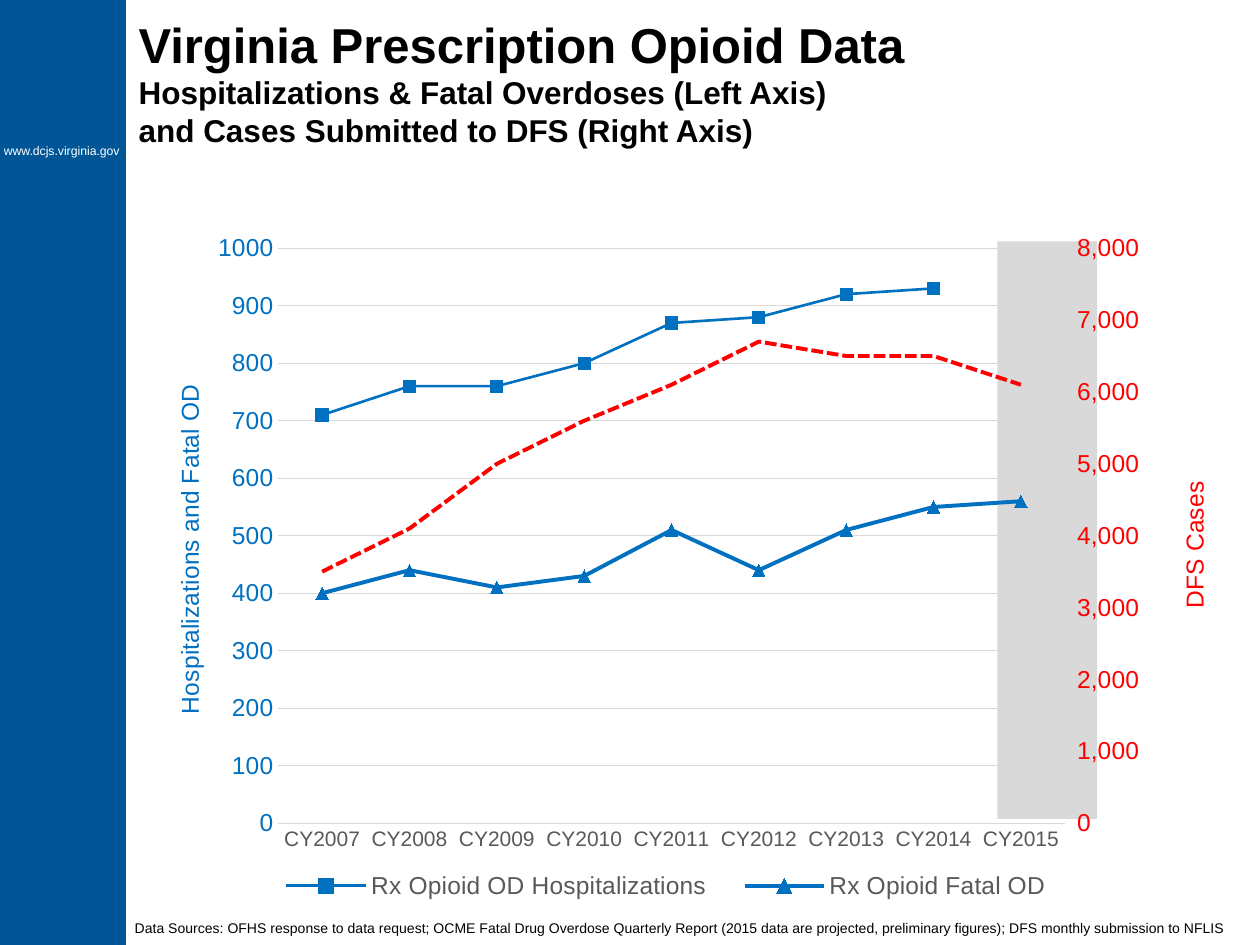
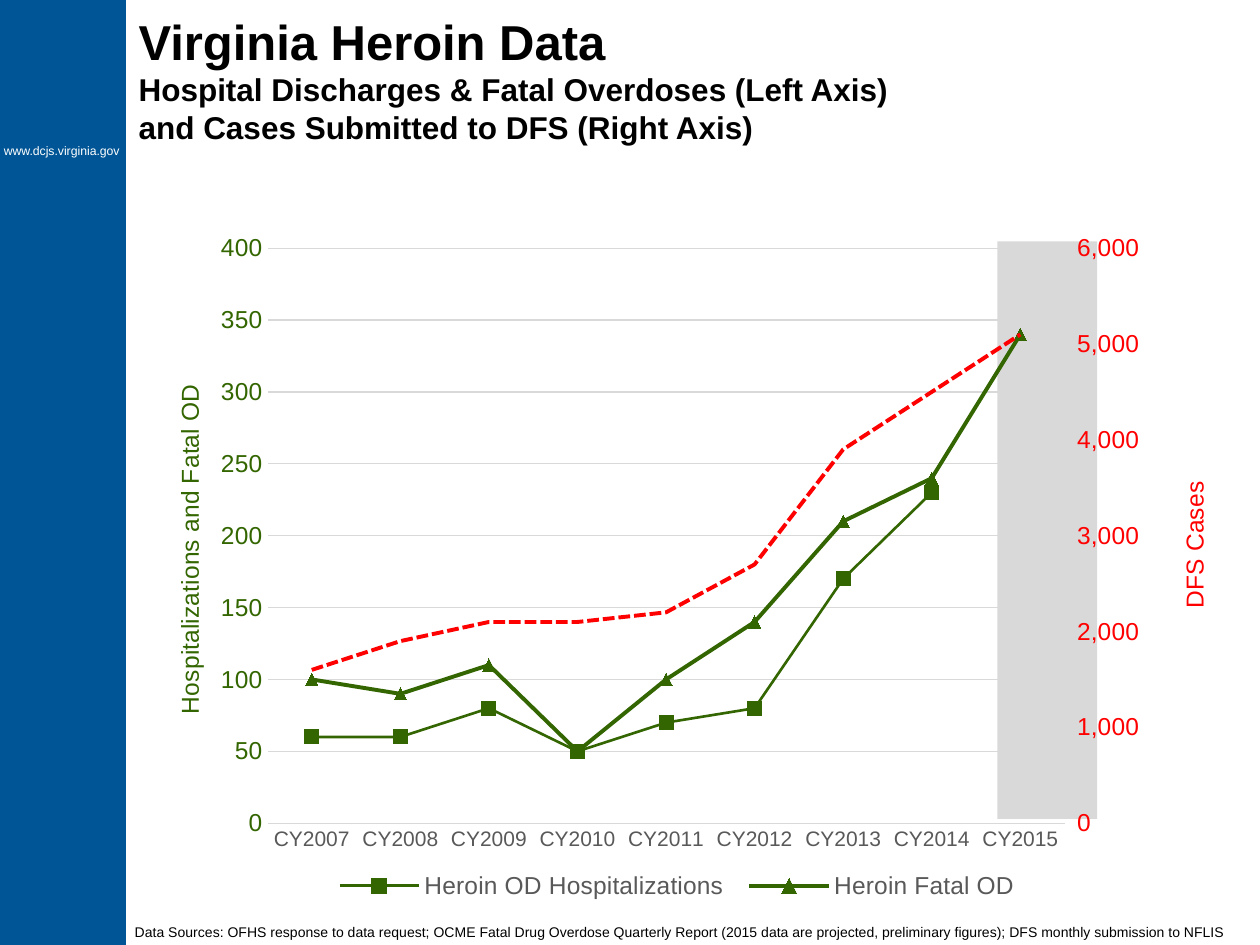
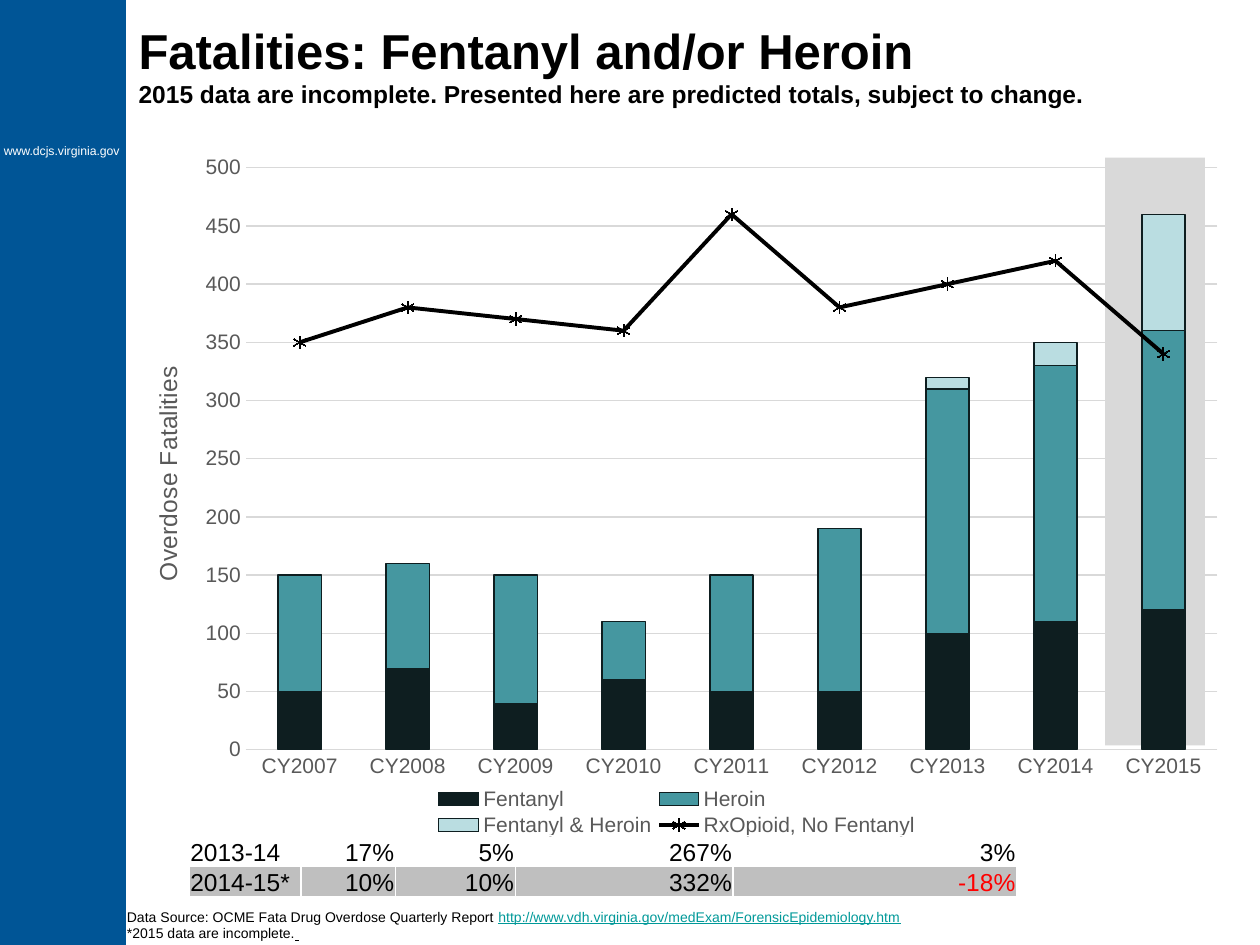
import copy
from dataclasses import dataclass

import pptx
import pptx.chart.axis
import pptx.chart.data
import pptx.dml.color
import pptx.enum.chart
import pptx.enum.dml
import pptx.enum.shapes
import pptx.enum.text
import pptx.oxml
import pptx.oxml.ns
import pptx.util

Pt = pptx.util.Pt
qn = pptx.oxml.ns.qn
ChartType = pptx.enum.chart.XL_CHART_TYPE
Marker = pptx.enum.chart.XL_MARKER_STYLE
Tick = pptx.enum.chart.XL_TICK_MARK


@dataclass(frozen=True)
class Theme:
    font: str = "Arial"
    black: str = "000000"
    white: str = "FFFFFF"
    band: str = "005596"
    gray: str = "D9D9D9"
    table_gray: str = "BFBFBF"
    axis_text: str = "595959"
    red: str = "FF0000"
    opioid: str = "0070C0"
    heroin: str = "336600"
    link: str = "009999"
    bar_line: str = "0E1E20"
    bars: tuple = ("0E1E20", "4597A0", "BADDE1")
    title: int = 28
    subtitle: int = 18
    large: int = 14
    label: int = 12
    small: int = 10
    source: int = 8
    web: int = 7


T = Theme()
YEARS = [f"CY{year}" for year in range(2007, 2016)]
SOURCES = ("Data Sources: OFHS response to data request; OCME Fatal Drug Overdose Quarterly Report "
           "(2015 data are projected, preliminary figures); DFS monthly submission to NFLIS")
AXIS_SUBTITLE = "and Cases Submitted to DFS (Right Axis)"
CHART_SIZE = (624, 396)


def rgb(color):
    return pptx.dml.color.RGBColor.from_string(color)


def set_font(font, size, color, bold=False):
    font.name, font.size, font.bold = T.font, Pt(size), bold
    font.color.rgb = rgb(color)


def add_rect(s, box, color):
    rect = s.shapes.add_shape(pptx.enum.shapes.MSO_SHAPE.RECTANGLE, *map(Pt, box))
    rect.shadow.inherit = False
    rect.fill.solid()
    rect.fill.fore_color.rgb = rgb(color)
    rect.line.fill.background()
    return rect


def add_text(s, box, paragraphs, size, color, wrap=True):
    """Each paragraph is a list of (text, colour, underline) runs."""
    sp = s.shapes.add_textbox(*map(Pt, box))
    tf = sp.text_frame
    tf.word_wrap = wrap
    tf.margin_left = tf.margin_right = tf.margin_top = tf.margin_bottom = 0
    for i, runs in enumerate(paragraphs):
        p = tf.add_paragraph() if i else tf.paragraphs[0]
        set_font(p.font, size, color)
        for text, run_color, underline in runs:
            r = p.add_run()
            r.text = text
            if run_color != color:
                r.font.color.rgb = rgb(run_color)
            if underline:
                r.font.underline = True
    return sp


def add_band_to_layout(s):
    """Build the side band on a slide, then move it to the back of its layout."""
    band = add_rect(s, (0, 0, 72, 540), T.band)
    web = add_text(s, (2.2, 82, 67, 8.6), [[("www.dcjs.virginia.gov", T.white, False)]],
                   T.web, T.white, wrap=False)
    tree = s.slide_layout.shapes.element
    for i, sp in enumerate((band, web)):
        tree.insert(2 + i, sp.element)


def add_title(s, top, lines, subtitle_size, bottom_inset=3.6):
    sp = s.shapes.title
    sp.left, sp.top, sp.width, sp.height = map(Pt, (72, top, 630, 90))
    tf = sp.text_frame
    tf.auto_size = pptx.enum.text.MSO_AUTO_SIZE.NONE
    tf.vertical_anchor = pptx.enum.text.MSO_ANCHOR.MIDDLE
    tf.margin_bottom = Pt(bottom_inset)
    p = tf.paragraphs[0]
    p.alignment = pptx.enum.text.PP_ALIGN.LEFT
    set_font(p.font, subtitle_size, T.black, bold=True)
    for i, line in enumerate(lines):
        if i:
            p.add_line_break()
        r = p.add_run()
        r.text = line
        if i == 0:
            r.font.size = Pt(T.title)


def chart_xml(text):
    return pptx.oxml.parse_xml(text.replace(
        "NS", 'xmlns:c="http://schemas.openxmlformats.org/drawingml/2006/chart" '
              'xmlns:a="http://schemas.openxmlformats.org/drawingml/2006/main"', 1))


def chart_part(chart, tag):
    return chart.element.find(".//" + qn(tag))


def set_layout(parent, after, values, inner=False):
    """Place a chart part by fractions x, y and optionally w, h."""
    old = parent.find(qn("c:layout"))
    if old is not None:
        parent.remove(old)
    names = "xywh"[:len(values)]
    parts = '<c:layoutTarget val="inner"/>' if inner else ""
    parts += "".join(f'<c:{n}Mode val="edge"/>' for n in names[:2])
    parts += "".join(f'<c:{n} val="{v}"/>' for n, v in zip(names, values))
    layout = chart_xml(f"<c:layout NS><c:manualLayout>{parts}</c:manualLayout></c:layout>")
    if after:
        parent.find(qn(after)).addnext(layout)
    else:
        parent.insert(0, layout)


def add_right_axes(axes):
    """Copy a category and value axis as a hidden and a right-hand one."""
    ids = ["50010", "50020"]
    category, value = copies = [copy.deepcopy(axis) for axis in axes]
    for axis, own, other in zip(copies, ids, reversed(ids)):
        axis.find(qn("c:axId")).set("val", own)
        axis.find(qn("c:crossAx")).set("val", other)
    axes[1].addnext(category)
    category.addnext(value)
    pptx.chart.axis.CategoryAxis(category).visible = False
    value.find(qn("c:axPos")).set("val", "r")
    value.find(qn("c:crosses")).set("val", "max")
    return copies


def split_last_series(chart, grouping, right=False):
    """Move the last series to its own line plot; return its value axis."""
    area = chart_part(chart, "c:plotArea")
    ser = area.findall(".//" + qn("c:ser"))[-1]
    for child in ser.findall(qn("c:invertIfNegative")):
        ser.remove(child)
    axes = [area.find(qn(tag)) for tag in ("c:catAx", "c:valAx")]
    if right:
        axes = add_right_axes(axes)
    ids = "".join(f'<c:axId val="{axis.find(qn("c:axId")).get("val")}"/>' for axis in axes)
    line = chart_xml(f'<c:lineChart NS><c:grouping val="{grouping}"/><c:varyColors val="0"/>'
                     f'<c:marker val="1"/>{ids}</c:lineChart>')
    line.find(qn("c:varyColors")).addnext(ser)
    area.find(qn("c:catAx")).addprevious(line)
    return pptx.chart.axis.ValueAxis(axes[1])


def style_value_axis(axis, top, step, size, color, title, title_at, tick, grid):
    axis.minimum_scale, axis.maximum_scale, axis.major_unit = 0, top, step
    axis.major_tick_mark, axis.minor_tick_mark = tick, Tick.NONE
    axis.has_major_gridlines = grid
    if grid:
        axis.major_gridlines.format.line.color.rgb = rgb(T.gray)
        axis.major_gridlines.format.line.width = Pt(0.75)
    axis.format.line.fill.background()
    set_font(axis.tick_labels.font, size, color)
    tf = axis.axis_title.text_frame
    tf.text = title
    set_font(tf.paragraphs[0].font, T.large, color)
    element = axis.axis_title.element
    body = element.find(".//" + qn("a:bodyPr"))
    body.set("rot", "-5400000")
    body.set("vert", "horz")
    set_layout(element, "c:tx", title_at)


def style_line(series, color, width, marker, size=7, filled=True, dashed=False):
    series.smooth = False
    line = series.format.line
    line.color.rgb = rgb(color)
    line.width = Pt(width)
    if dashed:
        line.dash_style = pptx.enum.dml.MSO_LINE.SQUARE_DOT
    series.marker.style = marker
    if marker == Marker.NONE:
        return
    series.marker.size = size
    series.marker.format.line.color.rgb = rgb(color)
    if filled:
        series.marker.format.fill.solid()
        series.marker.format.fill.fore_color.rgb = rgb(color)
    else:
        series.marker.format.fill.background()


def add_year_chart(s, left, top, kind, series, size, plot, legend, legend_size):
    """Add a transparent chart over YEARS with its category axis and legend."""
    data = pptx.chart.data.CategoryChartData()
    data.categories = YEARS
    for name, values in series:
        data.add_series(name, values)
    chart = s.shapes.add_chart(kind, *map(Pt, (left, top, *CHART_SIZE)), data).chart
    set_font(chart.font, size, T.black)
    chart.has_title = False
    chart.plots[0].vary_by_categories = False
    axis = chart.category_axis
    axis.major_tick_mark = axis.minor_tick_mark = Tick.NONE
    axis.format.line.color.rgb = rgb(T.gray)
    axis.format.line.width = Pt(0.75)
    set_font(axis.tick_labels.font, T.label, T.axis_text)
    chart.has_legend = True
    chart.legend.position = pptx.enum.chart.XL_LEGEND_POSITION.BOTTOM
    chart.legend.include_in_layout = False
    set_font(chart.legend.font, legend_size, T.axis_text)
    set_layout(chart_part(chart, "c:legend"), "c:legendPos", legend)
    area = chart_part(chart, "c:plotArea")
    set_layout(area, None, plot, inner=True)
    no_fill = "<c:spPr NS><a:noFill/><a:ln><a:noFill/></a:ln></c:spPr>"
    area.append(chart_xml(no_fill))
    chart_part(chart, "c:chart").addnext(chart_xml(no_fill))
    return chart


def add_overdose_chart(s, left, top, series, color, left_scale, right_scale, square, plot, legend):
    chart = add_year_chart(s, left, top, ChartType.LINE_MARKERS, series, T.large,
                           plot, legend, T.large)
    left_axis = chart.value_axis
    right_axis = split_last_series(chart, "standard", right=True)
    style_value_axis(left_axis, *left_scale, T.large, color,
                     "Hospitalizations and Fatal OD", (0.03, 0.23), Tick.NONE, True)
    style_value_axis(right_axis, *right_scale, T.large, T.red,
                     "DFS Cases", (0.95, 0.37), Tick.OUTSIDE, False)
    right_axis.tick_labels.number_format = "#,##0"
    right_axis.tick_labels.number_format_is_linked = False
    hospital, fatal = chart.plots[0].series
    style_line(hospital, color, 1.5, Marker.SQUARE, square)
    style_line(fatal, color, 2.25, Marker.TRIANGLE)
    style_line(chart.plots[1].series[0], T.red, 2.25, Marker.NONE, dashed=True)
    hidden = chart_xml('<c:legendEntry NS><c:idx val="2"/><c:delete val="1"/></c:legendEntry>')
    chart_part(chart, "c:legendPos").addnext(hidden)


def add_overdose_slide(s, title_top, title, subtitle, source_box, **chart):
    add_rect(s, (570, 138, 57, 330), T.gray)
    add_title(s, title_top, (title, subtitle, AXIS_SUBTITLE), T.subtitle)
    add_overdose_chart(s, 78, 126, **chart)
    add_text(s, source_box, [[(SOURCES, T.black, False)]], T.source, T.black)


def add_fatalities_chart(s, left, top):
    series = [
        ("Fentanyl", (50, 70, 40, 60, 50, 50, 100, 110, 120)),
        ("Heroin", (100, 90, 110, 50, 100, 140, 210, 220, 240)),
        ("Fentanyl & Heroin", (0, 0, 0, 0, 0, 0, 10, 20, 100)),
        ("RxOpioid, No Fentanyl", (350, 380, 370, 360, 460, 380, 400, 420, 340)),
    ]
    chart = add_year_chart(s, left, top, ChartType.COLUMN_STACKED, series, T.small,
                           (0.1, 0.03, 0.89, 0.84), (0.27, 0.92, 0.45, 0.08), T.label)
    axis = split_last_series(chart, "stacked")
    style_value_axis(axis, 500, 50, T.label, T.axis_text,
                     "Overdose Fatalities", (0.01, 0.31), Tick.NONE, True)
    bars, lines = chart.plots
    bars.gap_width, bars.overlap = 150, 100
    for bar, color in zip(bars.series, T.bars):
        bar.format.fill.solid()
        bar.format.fill.fore_color.rgb = rgb(color)
        bar.format.line.color.rgb = rgb(T.bar_line)
        bar.format.line.width = Pt(0.75)
    style_line(lines.series[0], T.black, 2.25, Marker.STAR, filled=False)


def add_change_table(s, left, top):
    rows = (("2013-14", "17%", "5%", "267%", "3%"),
            ("2014-15*", "10%", "10%", "332%", "-18%"))
    widths = (64, 54, 68.5, 124.5, 162)
    row_height = 17.5
    table = s.shapes.add_table(len(rows), len(widths), Pt(left), Pt(top), Pt(sum(widths)),
                               Pt(row_height * len(rows))).table
    table.first_row = table.horz_banding = False
    for column, width in zip(table.columns, widths):
        column.width = Pt(width)
    for i, row in enumerate(rows):
        table.rows[i].height = Pt(row_height)
        for j, text in enumerate(row):
            cell = table.cell(i, j)
            cell.margin_left = cell.margin_right = cell.margin_top = Pt(0.75)
            cell.margin_bottom = 0
            cell.vertical_anchor = pptx.enum.text.MSO_ANCHOR.BOTTOM
            for side in "LRTB":
                cell._tc.get_or_add_tcPr().append(chart_xml(
                    f'<a:ln{side} NS w="12700"><a:solidFill><a:srgbClr val="{T.white}"/>'
                    f'</a:solidFill></a:ln{side}>'))
            if i:
                cell.fill.solid()
                cell.fill.fore_color.rgb = rgb(T.table_gray)
            else:
                cell.fill.background()
            p = cell.text_frame.paragraphs[0]
            p.text = text
            if j:
                p.alignment = pptx.enum.text.PP_ALIGN.RIGHT
            set_font(p.font, T.large, T.red if text.startswith("-") else T.black)


def add_fatalities_slide(s):
    add_rect(s, (631.5, 90, 57, 336), T.gray)
    add_title(s, 0, ("Fatalities: Fentanyl and/or Heroin",
                     "2015 data are incomplete. Presented here are predicted totals, "
                     "subject to change."), T.large, bottom_inset=19.7)
    add_fatalities_chart(s, 78, 84)
    add_text(s, (72.5, 519, 614, 19.5), [
        [("Data Source: OCME Fata Drug Overdose Quarterly Report ", T.black, False),
         ("http://www.vdh.virginia.gov/medExam/ForensicEpidemiology.htm", T.link, True)],
        [("*2015 data are incomplete.", T.black, False), (" ", T.black, True)],
    ], T.source, T.black)
    add_change_table(s, 108, 477.5)


def main():
    prs = pptx.Presentation()
    prs.slide_width, prs.slide_height = Pt(720), Pt(540)
    opioid, heroin, fatalities = [prs.slides.add_slide(prs.slide_layouts[5]) for _ in range(3)]
    add_band_to_layout(opioid)
    add_overdose_slide(
        opioid, 1.5, "Virginia Prescription Opioid Data",
        "Hospitalizations & Fatal Overdoses (Left Axis)", (77, 525.6, 637, 13.7),
        series=[
            ("Rx Opioid OD Hospitalizations", (710, 760, 760, 800, 870, 880, 920, 930, None)),
            ("Rx Opioid Fatal OD", (400, 440, 410, 430, 510, 440, 510, 550, 560)),
            ("Rx Opioid DFS", (3500, 4100, 5000, 5600, 6100, 6700, 6500, 6500, 6100)),
        ],
        color=T.opioid, left_scale=(1000, 100), right_scale=(8000, 1000), square=7,
        plot=(0.13, 0.04, 0.72, 0.83), legend=(0.11, 0.93, 0.75, 0.06))
    add_overdose_slide(
        heroin, 0, "Virginia Heroin Data",
        "Hospital Discharges & Fatal Overdoses (Left Axis)", (77, 527.8, 625, 13.7),
        series=[
            ("Heroin OD Hospitalizations", (60, 60, 80, 50, 70, 80, 170, 230, None)),
            ("Heroin Fatal OD", (100, 90, 110, 50, 100, 140, 210, 240, 340)),
            ("Heroin DFS", (1600, 1900, 2100, 2100, 2200, 2700, 3900, 4500, 5100)),
        ],
        color=T.heroin, left_scale=(400, 50), right_scale=(6000, 1000), square=8,
        plot=(0.12, 0.04, 0.73, 0.83), legend=(0.17, 0.93, 0.65, 0.06))
    add_fatalities_slide(fatalities)
    prs.save("out.pptx")


if __name__ == "__main__":
    main()
